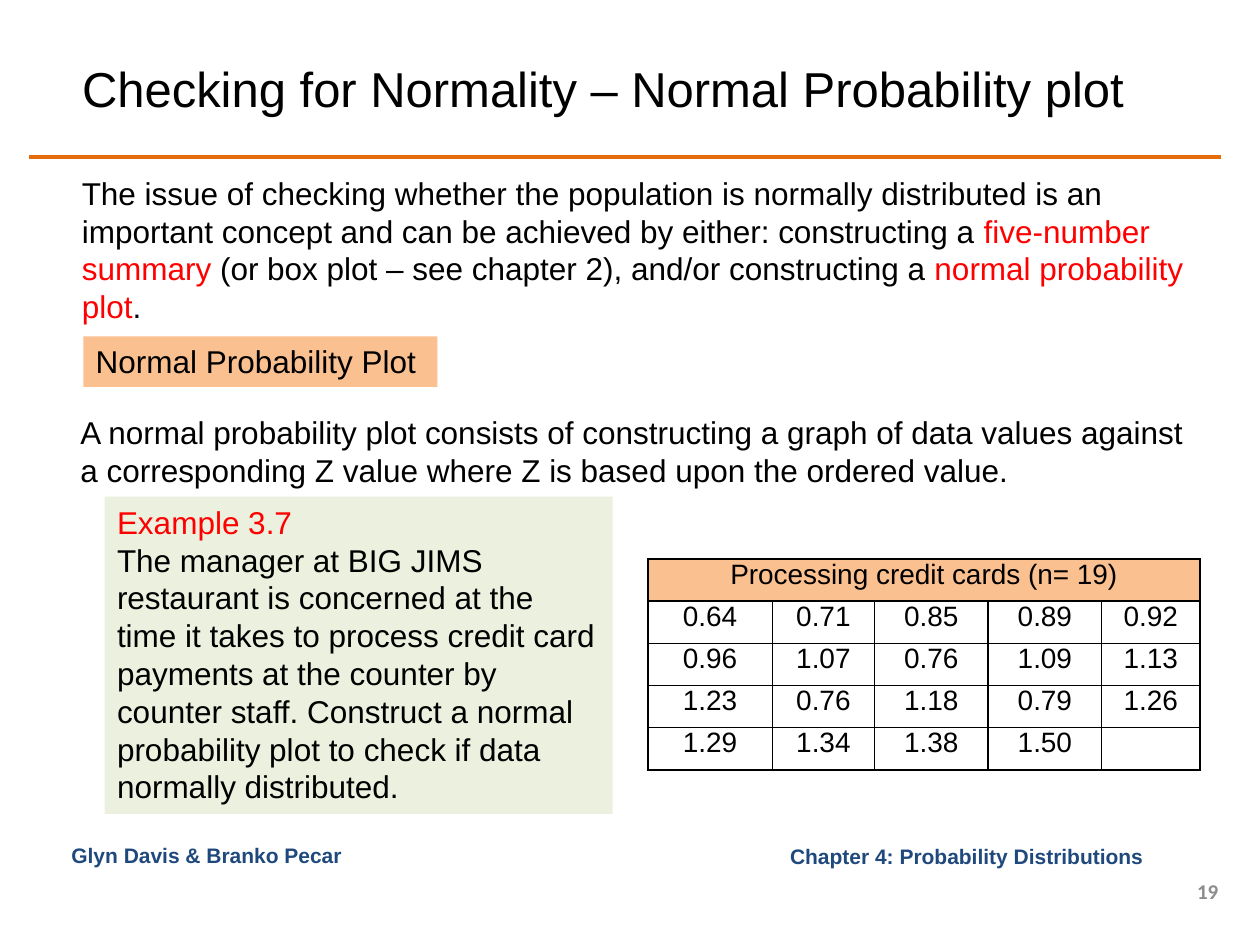
from dataclasses import dataclass

from lxml import etree
from pptx import Presentation
from pptx.dml.color import RGBColor
from pptx.enum.shapes import MSO_CONNECTOR, MSO_SHAPE
from pptx.enum.text import MSO_ANCHOR, MSO_AUTO_SIZE, PP_ALIGN
from pptx.oxml.ns import qn
from pptx.util import Cm, Pt

LEFT, CENTER, RIGHT = PP_ALIGN.LEFT, PP_ALIGN.CENTER, PP_ALIGN.RIGHT
TOP, MIDDLE = MSO_ANCHOR.TOP, MSO_ANCHOR.MIDDLE
TITLE_ONLY = 5


@dataclass(frozen=True)
class Theme:
    font: str = "Arial"
    number_font: str = "Calibri"
    text: str = "000000"
    accent: str = "FF0000"
    rule: str = "E46C0A"
    footer: str = "1F497D"
    number: str = "8C8C8C"
    orange: str = "FAC090"
    green: str = "EBF1DE"
    title_size: int = 28
    body_size: int = 18
    table_size: int = 16
    footer_size: int = 12


THEME = Theme()

# Content: each paragraph is a list of (text, colour) runs
TITLE = "Checking for Normality – Normal Probability plot"
INTRO = [[
    ("The issue of checking whether the population is normally distributed is an "
     "important concept and can be achieved by either: constructing a ", THEME.text),
    ("five-number summary", THEME.accent),
    (" (or box plot – see chapter 2), and/or constructing a ", THEME.text),
    ("normal probability plot", THEME.accent),
    (".", THEME.text),
]]
LABEL = [[("Normal Probability Plot", THEME.text)]]
DEFINITION = [[
    ("A normal probability plot consists of constructing a graph of data values against "
     "a corresponding Z value where Z is based upon the ordered value.", THEME.text),
]]
EXAMPLE = [
    [("Example 3.7", THEME.accent)],
    [("The manager at BIG JIMS restaurant is concerned at the time it takes to process "
      "credit card payments at the counter by counter staff. Construct a normal "
      "probability plot to check if data normally distributed.", THEME.text)],
]
TABLE_HEADING = "Processing credit cards (n= 19)"
TABLE_ROWS = [
    ["0.64", "0.71", "0.85", "0.89", "0.92"],
    ["0.96", "1.07", "0.76", "1.09", "1.13"],
    ["1.23", "0.76", "1.18", "0.79", "1.26"],
    ["1.29", "1.34", "1.38", "1.50", ""],
]

# Body blocks: paragraphs, (left, top, width, height) in cm, fill
BODY_BLOCKS = [
    (INTRO, (1.4, 3.38, 23.22, 3.33), None),
    (LABEL, (1.68, 6.78, 7.14, 1.02), THEME.orange),
    (DEFINITION, (1.37, 8.2, 23.22, 1.8), None),
    (EXAMPLE, (2.11, 10.01, 10.24, 6.4), THEME.green),
]
# Footers: text, box in cm, alignment, anchor, font, colour
FOOTERS = [
    ("Glyn Davis & Branko Pecar", (1.19, 16.87, 7.54, 0.79),
     LEFT, TOP, THEME.font, THEME.footer),
    ("Chapter 4: Probability Distributions ", (13.89, 16.87, 9.53, 0.79),
     RIGHT, MIDDLE, THEME.font, THEME.footer),
    ("19", (23.62, 17.65, 1.19, 0.61),
     RIGHT, MIDDLE, THEME.number_font, THEME.number),
]
TABLE_LEFT, TABLE_TOP, ROW_HEIGHT = 13.06, 11.27, 0.85
COLUMN_WIDTHS = [2.51, 2.06, 2.29, 2.29, 1.98]


def write(frame, paragraphs, size, font=THEME.font, bold=False, align=LEFT):
    for index, runs in enumerate(paragraphs):
        paragraph = frame.add_paragraph() if index else frame.paragraphs[0]
        paragraph.alignment = align
        for text, color in runs:
            run = paragraph.add_run()
            run.text = text
            run.font.name = font
            run.font.size = Pt(size)
            run.font.bold = bold
            run.font.color.rgb = RGBColor.from_string(color)


def add_block(slide, box, fill=None, anchor=TOP):
    box = [Cm(value) for value in box]
    if fill:
        shape = slide.shapes.add_shape(MSO_SHAPE.RECTANGLE, *box)
        shape.shadow.inherit = False
        shape.fill.solid()
        shape.fill.fore_color.rgb = RGBColor.from_string(fill)
        shape.line.fill.background()
    else:
        shape = slide.shapes.add_textbox(*box)
    frame = shape.text_frame
    frame.word_wrap = True
    frame.vertical_anchor = anchor
    return frame


def add_rule(slide):
    line = slide.shapes.add_connector(
        MSO_CONNECTOR.STRAIGHT, Cm(0.58), Cm(3.17), Cm(24.61), Cm(3.17))
    line.line.color.rgb = RGBColor.from_string(THEME.rule)
    line.line.width = Pt(2)
    etree.SubElement(line._element.spPr, qn("a:effectLst"))


def set_title(slide):
    title = slide.shapes.title
    title.left, title.top, title.width, title.height = Cm(1.4), Cm(0.79), Cm(23.22), Cm(1.98)
    frame = title.text_frame
    frame.auto_size = MSO_AUTO_SIZE.NONE
    frame.vertical_anchor = MIDDLE
    write(frame, [[(TITLE, THEME.text)]], THEME.title_size)


def format_cell(cell, fill=None):
    cell.margin_left = cell.margin_right = Cm(0.18)
    cell.margin_top = cell.margin_bottom = Cm(0)
    properties = cell._tc.get_or_add_tcPr()
    for side in ("a:lnL", "a:lnR", "a:lnT", "a:lnB"):
        border = etree.SubElement(properties, qn(side), w=str(Pt(1)))
        solid = etree.SubElement(border, qn("a:solidFill"))
        etree.SubElement(solid, qn("a:srgbClr"), val=THEME.text)
    if fill:
        cell.fill.solid()
        cell.fill.fore_color.rgb = RGBColor.from_string(fill)
    else:
        cell.fill.background()


def add_data_table(slide):
    row_count, column_count = len(TABLE_ROWS) + 1, len(COLUMN_WIDTHS)
    table = slide.shapes.add_table(
        row_count, column_count, Cm(TABLE_LEFT), Cm(TABLE_TOP),
        Cm(sum(COLUMN_WIDTHS)), Cm(ROW_HEIGHT * row_count)).table
    table.first_row = table.horz_banding = False
    for column, width in zip(table.columns, COLUMN_WIDTHS):
        column.width = Cm(width)
    heading_row = [TABLE_HEADING] + [""] * (column_count - 1)
    for row_index, values in enumerate([heading_row] + TABLE_ROWS):
        table.rows[row_index].height = Cm(ROW_HEIGHT)
        for column_index, value in enumerate(values):
            cell = table.cell(row_index, column_index)
            format_cell(cell, None if row_index else THEME.orange)
            if value:
                write(cell.text_frame, [[(value, THEME.text)]], THEME.table_size, align=CENTER)
    table.cell(0, 0).merge(table.cell(0, column_count - 1))


def main():
    presentation = Presentation()
    presentation.slide_width, presentation.slide_height = Cm(25.4), Cm(19.05)
    slide = presentation.slides.add_slide(presentation.slide_layouts[TITLE_ONLY])

    # Title, rule and footers
    add_rule(slide)
    set_title(slide)
    for text, box, align, anchor, font, color in FOOTERS:
        frame = add_block(slide, box, anchor=anchor)
        write(frame, [[(text, color)]], THEME.footer_size, font, True, align)

    # Body text and data table
    for paragraphs, box, fill in BODY_BLOCKS:
        write(add_block(slide, box, fill), paragraphs, THEME.body_size)
    add_data_table(slide)

    presentation.save("out.pptx")


if __name__ == "__main__":
    main()
